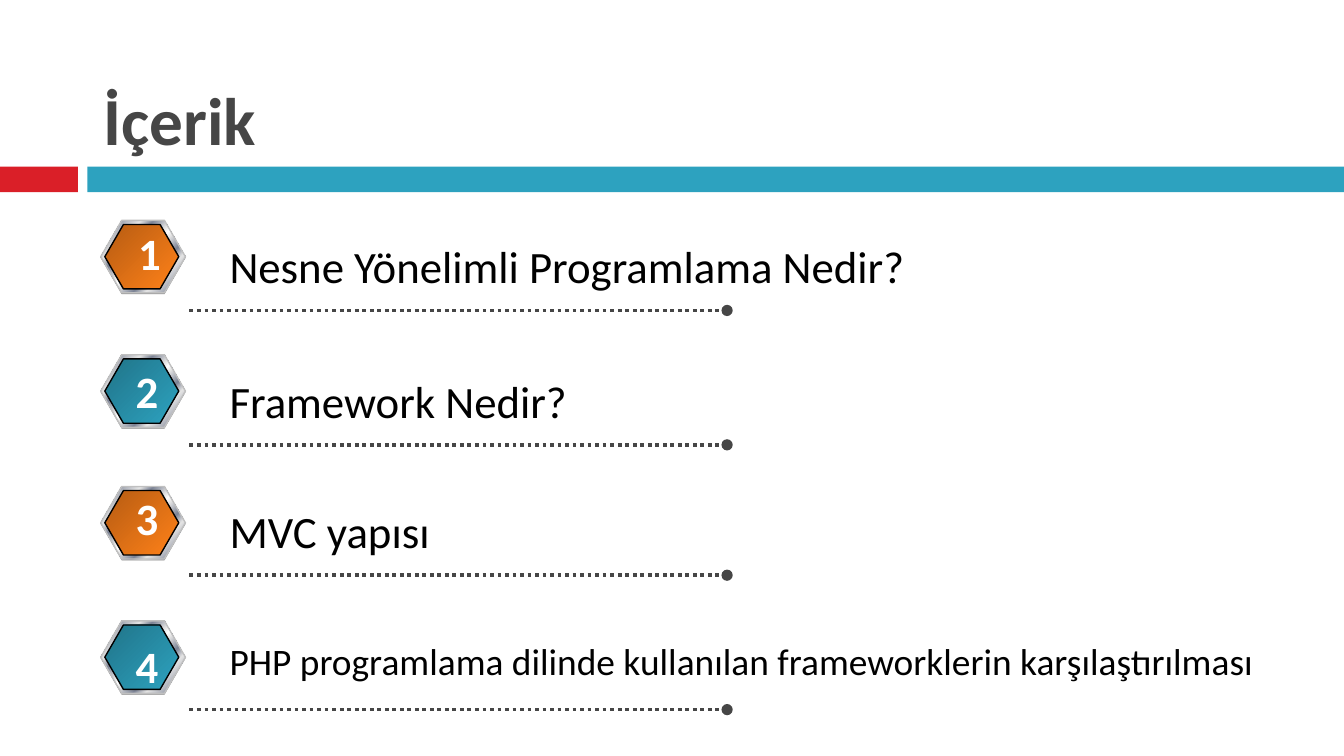
"""Build the contents slide with four numbered hexagon entries."""
from pptx import Presentation
from pptx.dml.color import RGBColor
from pptx.enum.dml import MSO_LINE
from pptx.enum.shapes import MSO_CONNECTOR, MSO_SHAPE
from pptx.enum.text import MSO_ANCHOR, MSO_AUTO_SIZE, PP_ALIGN
from pptx.oxml.ns import qn
from pptx.util import Inches, Pt
from lxml.etree import SubElement

COLORS = {
    "red": "DA1F28", "teal": "2DA2BF", "dark teal": "207489",
    "orange": "FF8119", "dark orange": "B65C12", "ink": "464646",
    "black": "000000", "white": "FFFFFF", "shade": "808080",
    "rim": "C0C0C0", "silver": "E6E6E6", "steel": "7D8496",
}
ORANGE = [(0, "dark orange"), (100, "orange")]
TEAL = [(0, "dark teal"), (100, "teal")]
METAL = [
    (0, "silver"), (7, "steel"), (26, "silver"), (34, "steel"),
    (46, "silver"), (50, "white"), (54, "silver"), (66, "steel"),
    (74, "silver"), (93, "steel"), (100, "silver"),
]
ENTRIES = [
    (1.64, ORANGE, "Nesne Yönelimli Programlama Nedir?", 24, 6.46, 0.5, 0.93, 1.63),
    (2.64, TEAL, "Framework Nedir?", 24, 4, 0.5, 0.91, 2.66),
    (3.62, ORANGE, "MVC yapısı", 24, 6.05, 0.5, 0.91, 3.6),
    (4.62, TEAL, "PHP programlama dilinde kullanılan frameworklerin karşılaştırılması",
     20, 8.11, 0.44, 0.91, 4.7),
]


def add_filled(shapes, kind, bounds, stops, line=None):
    shape = shapes.add_shape(kind, *map(Inches, bounds))
    shape.shadow.inherit = False
    if len(stops) == 1:
        shape.fill.solid()
        shape.fill.fore_color.rgb = RGBColor.from_string(COLORS[stops[0][1]])
    else:
        shape.fill.gradient()
        shape.fill.gradient_angle = 315
        stop_list = shape._element.spPr.find(".//" + qn("a:gsLst"))
        stop_list[:] = []
        for position, color in stops:
            stop = SubElement(stop_list, qn("a:gs"), pos=str(position * 1000))
            SubElement(stop, qn("a:srgbClr"), val=COLORS[color])
    if line:
        shape.line.color.rgb = RGBColor.from_string(COLORS[line])
        shape.line.width = Pt(0.75)
    else:
        shape.line.fill.background()
    if kind == MSO_SHAPE.HEXAGON:
        shape.adjustments[0] = 0.289


def style_text(box, text, size, color, bold=False, align=PP_ALIGN.LEFT):
    frame = box.text_frame
    frame.text = text
    frame.word_wrap = True
    para = frame.paragraphs[0]
    para.alignment = align
    font = para.runs[0].font
    font.name, font.size, font.bold = "Calibri", Pt(size), bold
    font.color.rgb = RGBColor.from_string(COLORS[color])


deck = Presentation()
deck.slide_width = Inches(10)
deck.slide_height = deck.slide_width * 9 // 16
page = deck.slides.add_slide(deck.slide_layouts[5])

for left, width, color in [(0, 0.58, "red"), (0.65, 9.35, "teal")]:
    add_filled(page.shapes, MSO_SHAPE.RECTANGLE, (left, 1.24, width, 0.19), [(0, color)])

title = page.shapes.title
title.left, title.top = Inches(0.67), Inches(0.13)
title.width, title.height = Inches(8.92), Inches(1.1)
style_text(title, "İçerik", 36, "ink", bold=True)
title.text_frame.vertical_anchor = MSO_ANCHOR.BOTTOM
title.text_frame.auto_size = MSO_AUTO_SIZE.NONE

for number, entry in enumerate(ENTRIES, 1):
    top, face, topic, size, width, height, digit_left, digit_top = entry
    badge = page.shapes.add_group_shape()
    for bounds, stops, line in [
        ((0.75, top + 0.01, 0.63, 0.54), [(0, "shade")], None),
        ((0.75, top, 0.63, 0.54), METAL, "rim"),
        ((0.78, top + 0.03, 0.55, 0.48), face, "black"),
    ]:
        add_filled(badge.shapes, MSO_SHAPE.HEXAGON, bounds, stops, line)

    line_top = Inches(top + 0.67 if number < 3 else top + 0.66)
    rule = page.shapes.add_connector(
        MSO_CONNECTOR.STRAIGHT, Inches(1.41), line_top, Inches(5.41), line_top)
    rule.line.color.rgb = RGBColor.from_string(COLORS["ink"])
    rule.line.width = Pt(2)
    rule.line.dash_style = MSO_LINE.ROUND_DOT
    SubElement(rule.line._get_or_add_ln(), qn("a:tailEnd"), type="oval")
    SubElement(rule._element.spPr, qn("a:effectLst"))

    topic_box = page.shapes.add_textbox(
        Inches(1.61), Inches(top + 0.08 if number > 2 else top + 0.09),
        Inches(width), Inches(height))
    style_text(topic_box, topic, size, "black")
    digit_box = page.shapes.add_textbox(
        Inches(digit_left), Inches(digit_top), Inches(0.29), Inches(0.5))
    style_text(digit_box, str(number), 24, "white", bold=True, align=PP_ALIGN.CENTER)
    for box in (topic_box, digit_box):
        box.text_frame.auto_size = MSO_AUTO_SIZE.SHAPE_TO_FIT_TEXT

deck.save("out.pptx")
